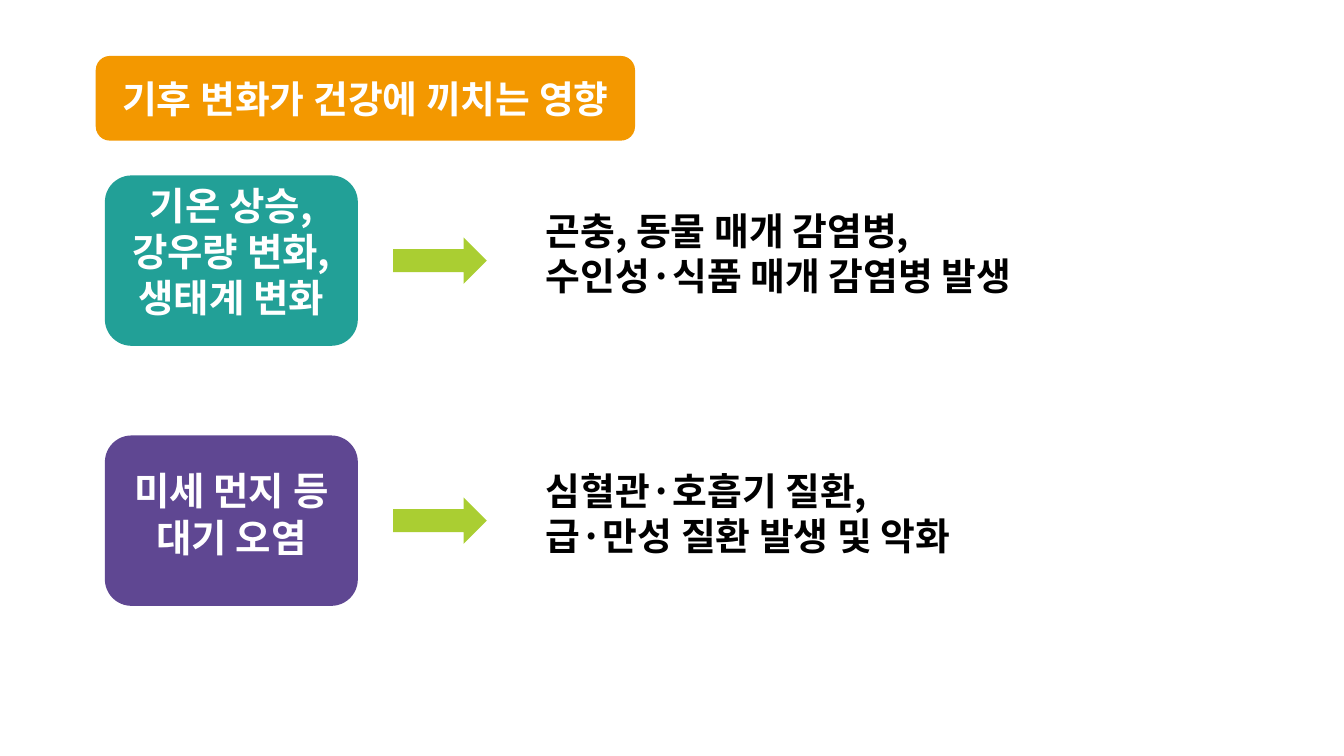
from pptx import Presentation
from pptx.dml.color import RGBColor
from pptx.enum.shapes import MSO_SHAPE
from pptx.enum.text import MSO_ANCHOR, MSO_AUTO_SIZE, PP_ALIGN
from pptx.oxml.ns import qn
from pptx.util import Pt
from lxml.etree import SubElement

FONT = "Noto Sans CJK KR"
COLORS = {"banner": "F39800", "climate": "22A097", "dust": "5F4792",
          "arrow": "AACE32", "light": "FFFFFF", "dark": "000000"}
ROWS = [
    ("climate", "기온 상승, 강우량 변화, 생태계 변화", 0, 243.4,
     ["곤충, 동물 매개 감염병,", "수인성·식품 매개 감염병 발생"]),
    ("dust", "미세 먼지 등 대기 오염", 36.7, 154.8,
     ["심혈관·호흡기 질환,", "급·만성 질환 발생 및 악화"]),
]
ROW_LEFT, ROW_TOP, ROW_WIDTH, ROW_HEIGHT, ROW_PITCH = 149.8, 250.6, 1582.5, 243.4, 371.5


def add_block(shapes, kind, color, box):
    """Add a plain filled preset shape."""
    sp = shapes.add_shape(kind, *map(Pt, box))
    sp.shadow.inherit = False
    sp.fill.solid()
    sp.fill.fore_color.rgb = RGBColor.from_string(COLORS[color])
    sp.line.fill.background()
    return sp


def write(sp, lines, size, color, align, inset, top, anchor=MSO_ANCHOR.TOP):
    """Fill a shape with bold paragraphs in one style."""
    tf = sp.text_frame
    tf.word_wrap = True
    tf.auto_size = MSO_AUTO_SIZE.NONE
    tf.vertical_anchor = anchor
    tf.margin_left = tf.margin_right = Pt(inset)
    tf.margin_top, tf.margin_bottom = Pt(top), Pt(4)
    tf.text = "\n".join(lines)
    for p in tf.paragraphs:
        p.alignment = align
        p.line_spacing = 1.0
        p.space_before = Pt(0)
        p.font.name = FONT
        p.font.size = Pt(size)
        p.font.bold = True
        p.font.color.rgb = RGBColor.from_string(COLORS[color])
        props = p.font._element if hasattr(p.font, "_element") else p.font._rPr
        SubElement(props, qn("a:ea")).set("typeface", FONT)


def add_banner(s, box):
    """Place the slide title on its rounded banner."""
    x, y, w, h = box
    add_block(s.shapes, MSO_SHAPE.ROUNDED_RECTANGLE, "banner", box)
    title = s.shapes.title
    title.left, title.top = Pt(x + 13), Pt(y + 25.2)
    title.width, title.height = Pt(w - 26), Pt(h - 50.4)
    write(title, ["기후 변화가 건강에 끼치는 영향"], 54, "light",
          PP_ALIGN.CENTER, 4.5, 4, MSO_ANCHOR.MIDDLE)
    s.shapes._spTree.append(title._element)


def add_row(s, box, color, cause, label_dy, label_height, effects):
    """Place a cause, an arrow and the resulting effects side by side."""
    x, y, w, h = box
    group = s.shapes.add_group_shape()
    cause_width, label_inset = 361.4, 19.1
    card = add_block(group.shapes, MSO_SHAPE.ROUNDED_RECTANGLE, color,
                     (x, y, cause_width, h))
    card.adjustments[0] = 0.156
    label = group.shapes.add_textbox(
        Pt(x + label_inset), Pt(y + label_dy),
        Pt(cause_width - 2 * label_inset), Pt(label_height))
    write(label, [cause], 55, "light", PP_ALIGN.CENTER, 4.5, 9)

    arrow_height = 66.2
    add_block(s.shapes, MSO_SHAPE.RIGHT_ARROW, "arrow",
              (x + 411.8, y + (h - arrow_height) / 2, 133.9, arrow_height))

    text_dx = 622.8
    result = s.shapes.add_textbox(Pt(x + text_dx), Pt(y + 36.4),
                                  Pt(w - text_dx), Pt(157.7))
    write(result, effects, 54, "dark", PP_ALIGN.LEFT, 7.2, 9)


def main():
    """Build and save the slide."""
    prs = Presentation()
    prs.slide_width, prs.slide_height = Pt(1920), Pt(1080)
    s = prs.slides.add_slide(prs.slide_layouts[5])
    add_banner(s, (136.8, 79.9, 770.4, 121))
    for i, row in enumerate(ROWS):
        add_row(s, (ROW_LEFT, ROW_TOP + i * ROW_PITCH, ROW_WIDTH, ROW_HEIGHT), *row)
    prs.save("out.pptx")


if __name__ == "__main__":
    main()
